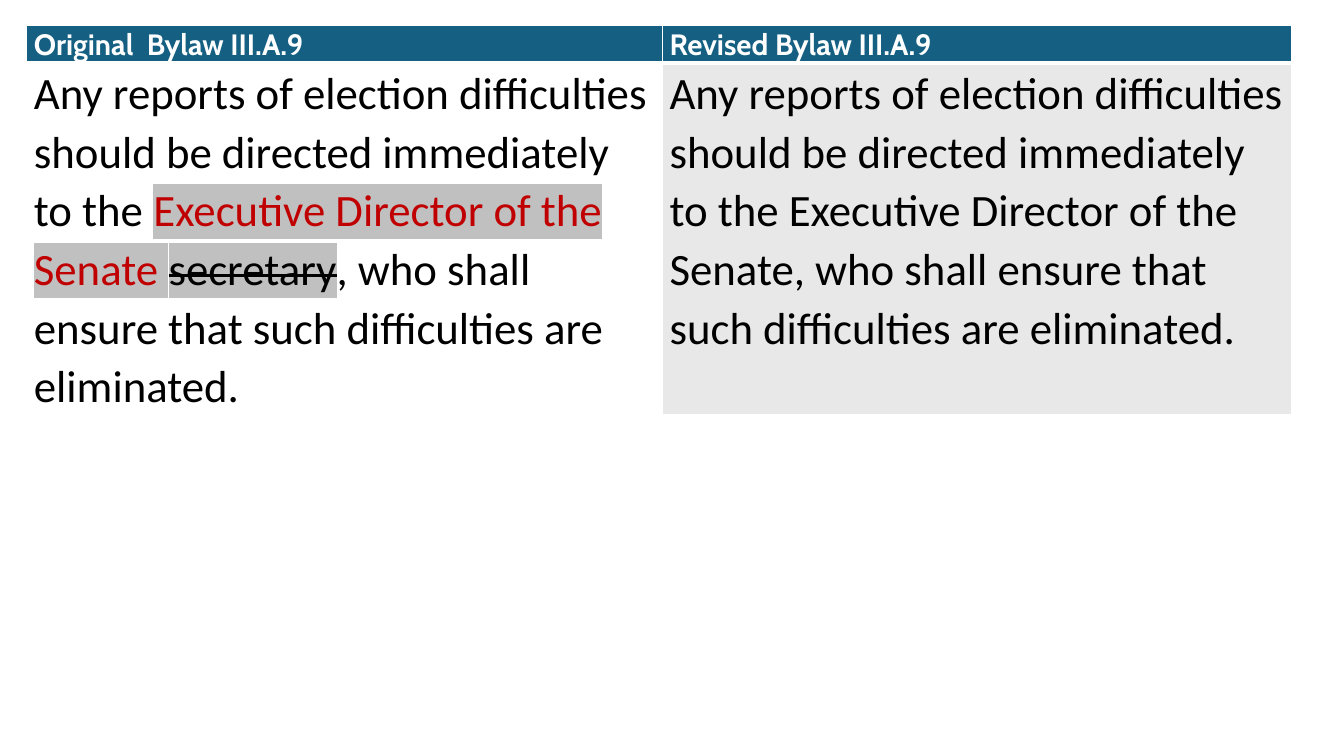
from dataclasses import dataclass

from lxml.etree import SubElement
from pptx import Presentation
from pptx.dml.color import RGBColor
from pptx.oxml import parse_xml
from pptx.oxml.ns import nsdecls, qn
from pptx.table import _Cell as Cell
from pptx.text.text import _Paragraph as Paragraph
from pptx.util import Emu, Inches, Pt

COLORS = {
    "white": "FFFFFF",
    "header": "156082",
    "revised": "E8E8E8",
    "text": "000000",
    "insertion": "C00000",
    "marker": "C0C0C0",
}
SLIDE_W, SLIDE_H = Inches(13.33), Inches(7.5)
LEFT, TOP = 0.02, 0.033  # shares of the slide
COLUMN_SHARES = (0.473, 0.468)
ROW_SHARES = (0.05, 0.45)
SIDE_MARGIN = Inches(0.07)
LINE_SPACING = 1.07


@dataclass(frozen=True)
class Passage:
    text: str
    color: str = "text"
    marked: bool = False
    struck: bool = False


@dataclass(frozen=True)
class Version:
    heading: str
    passages: tuple[Passage, ...]
    fill: str | None = None


OPENING = ("Any reports of election difficulties should be directed "
           "immediately to the ")
CLOSING = ", who shall ensure that such difficulties are eliminated."
VERSIONS = (
    Version("Original  Bylaw III.A.9", (
        Passage(OPENING),
        Passage("Executive Director of the Senate ", "insertion", marked=True),
        Passage("secretary", marked=True, struck=True),
        Passage(CLOSING),
    )),
    Version("Revised Bylaw III.A.9", (
        Passage(f"{OPENING}Executive Director of the Senate{CLOSING}"),
    ), fill="revised"),
)


def add_text(paragraph: Paragraph, text: str, *, font: str, size: float,
             color: str = "text", bold: bool = False, marked: bool = False,
             struck: bool = False) -> None:
    run = paragraph.add_run()
    run.text = text
    run.font.size, run.font.bold = Pt(size), bold
    run.font.color.rgb = RGBColor.from_string(COLORS[color])
    properties = run._r.get_or_add_rPr()
    if struck:
        properties.set("strike", "sngStrike")
    if marked:
        properties.append(parse_xml(
            f'<a:highlight {nsdecls("a")}>'
            f'<a:srgbClr val="{COLORS["marker"]}"/></a:highlight>'))
    run.font.name = font


def style_cell(cell: Cell, fill: str | None, bottom_width: float) -> Paragraph:
    """Set margins, white borders and fill; return the cell's paragraph."""
    cell.margin_left = cell.margin_right = SIDE_MARGIN
    cell.margin_top = cell.margin_bottom = 0
    properties = cell._tc.get_or_add_tcPr()
    for side, width in {"L": 1, "R": 1, "T": 1, "B": bottom_width}.items():
        border = SubElement(properties, qn(f"a:ln{side}"), w=str(Pt(width)))
        line_fill = SubElement(border, qn("a:solidFill"))
        SubElement(line_fill, qn("a:srgbClr"), val=COLORS["white"])
    if fill:
        cell.fill.solid()
        cell.fill.fore_color.rgb = RGBColor.from_string(COLORS[fill])
    else:
        cell.fill.background()
    paragraph = cell.text_frame.paragraphs[0]
    paragraph.line_spacing = LINE_SPACING
    return paragraph


def main() -> None:
    deck = Presentation()
    deck.slide_width, deck.slide_height = SLIDE_W, SLIDE_H
    slide = deck.slides.add_slide(deck.slide_layouts[6])
    comparison = slide.shapes.add_table(
        len(ROW_SHARES), len(VERSIONS),
        Emu(int(SLIDE_W * LEFT)), Emu(int(SLIDE_H * TOP)),
        Emu(int(SLIDE_W * sum(COLUMN_SHARES))),
        Emu(int(SLIDE_H * sum(ROW_SHARES)))).table
    comparison.horz_banding = False
    for row, share in zip(comparison.rows, ROW_SHARES):
        row.height = Emu(int(SLIDE_H * share))
    for index, (version, share) in enumerate(zip(VERSIONS, COLUMN_SHARES)):
        comparison.columns[index].width = Emu(int(SLIDE_W * share))
        heading = style_cell(comparison.cell(0, index), "header", 3)
        add_text(heading, version.heading, font="Cabin", size=21,
                 color="white", bold=True)
        bylaw = style_cell(comparison.cell(1, index), version.fill, 1)
        for passage in version.passages:
            add_text(bylaw, passage.text, font="Calibri", size=32,
                     color=passage.color, marked=passage.marked,
                     struck=passage.struck)
    deck.save("out.pptx")


if __name__ == "__main__":
    main()
